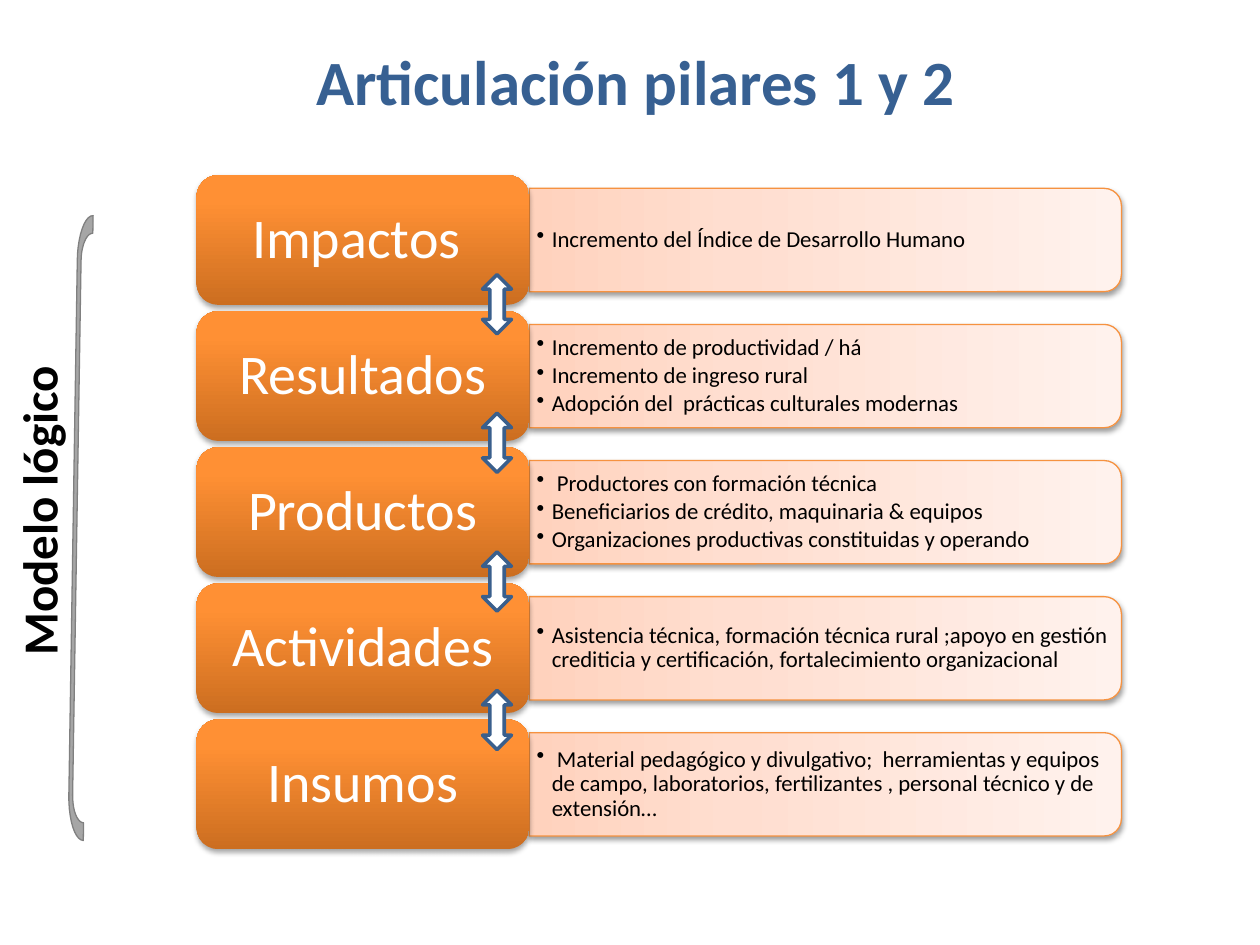
from math import cos, pi, sin

from lxml.etree import SubElement
from pptx import Presentation
from pptx.dml.color import RGBColor
from pptx.enum.shapes import MSO_SHAPE
from pptx.enum.text import MSO_ANCHOR, PP_ALIGN
from pptx.oxml.ns import qn
from pptx.util import Inches, Pt

ROUNDED = MSO_SHAPE.ROUNDED_RECTANGLE
TWO_ROUNDED = MSO_SHAPE.ROUND_2_SAME_RECTANGLE
DOUBLE_ARROW = MSO_SHAPE.UP_DOWN_ARROW
TOP, MIDDLE = MSO_ANCHOR.TOP, MSO_ANCHOR.MIDDLE
LEFT, CENTER = PP_ALIGN.LEFT, PP_ALIGN.CENTER

FONT = "Calibri"
COLORS = {
    "title": "376092", "black": "000000", "white": "FFFFFF",
    "panel_line": "F69240", "arrow_line": "3A5F8C",
    "bracket": "A6A6A6", "bracket_line": "808080",
}
PANEL_STOPS = [(0, "FFD2BD"), (35, "FFDED0"), (100, "FFF2ED")]
LABEL_STOPS = [(0, "CC6E20"), (80, "FF9034"), (100, "FF9136")]

LEVELS = [
    ("Impactos ", ["Incremento del Índice de Desarrollo Humano"]),
    ("Resultados", [
        "Incremento de productividad / há",
        "Incremento de ingreso rural",
        "Adopción del  prácticas culturales modernas",
    ]),
    ("Productos", [
        " Productores con formación técnica",
        "Beneficiarios de crédito, maquinaria & equipos",
        "Organizaciones productivas constituidas y operando",
    ]),
    ("Actividades", [
        "Asistencia técnica, formación técnica rural ;apoyo en gestión "
        "crediticia y certificación, fortalecimiento organizacional",
    ]),
    ("Insumos", [
        " Material pedagógico y divulgativo;  herramientas y equipos de campo, "
        "laboratorios, fertilizantes , personal técnico y de extensión…",
    ]),
]
FIRST_TOP, LEVEL_STEP = 1.39, 1.08
LABEL_LEFT, LABEL_WIDTH, LABEL_HEIGHT = 1.56, 2.64, 1.03
PANEL_LEFT, PANEL_WIDTH, PANEL_HEIGHT = 4.2, 4.7, 0.82
ARROW_TOP, ARROW_STEP = 2.18, 1.1


def color(name):
    return RGBColor.from_string(COLORS[name])


def add_text(page, place, lines, size, color_name, bold=False, align=LEFT,
             anchor=TOP, inset=(0.1, 0.05), wrap=True, spacing=None,
             after=None, bullet=False):
    box = page.shapes.add_textbox(*map(Inches, place))
    frame = box.text_frame
    frame.word_wrap = wrap
    frame.vertical_anchor = anchor
    frame.margin_left = frame.margin_right = Inches(inset[0])
    frame.margin_top = frame.margin_bottom = Inches(inset[1])
    for index, line in enumerate(lines):
        para = frame.add_paragraph() if index else frame.paragraphs[0]
        para.alignment = align
        para.line_spacing = spacing
        para.space_after = after
        if bullet:
            add_bullet(para)
        span = para.add_run()
        span.text = line
        span.font.name = FONT
        span.font.size = Pt(size)
        span.font.bold = bold
        span.font.color.rgb = color(color_name)
    return box


def add_bullet(para):
    para.level = 1
    properties = para._p.get_or_add_pPr()
    properties.set("marL", str(Inches(0.12)))
    properties.set("indent", str(-Inches(0.12)))
    SubElement(properties, qn("a:buChar"), char="•")


def add_shape(page, kind, place, line=None, line_width=0):
    shape = page.shapes.add_shape(kind, *map(Inches, place))
    shape.shadow.inherit = False
    if line:
        shape.line.color.rgb = color(line)
        shape.line.width = Pt(line_width)
    else:
        shape.line.fill.background()
    return shape


def fill_gradient(shape, stops):
    shape.fill.gradient()
    shape.fill.gradient_angle = 90
    stop_list = shape._element.spPr.find(qn("a:gradFill")).find(qn("a:gsLst"))
    stop_list.clear()
    for position, value in stops:
        stop = SubElement(stop_list, qn("a:gs"), pos=str(position * 1000))
        SubElement(stop, qn("a:srgbClr"), val=value)


def add_shadow(shape, distance, opacity):
    effects = shape._element.spPr.find(qn("a:effectLst"))
    shadow = SubElement(effects, qn("a:outerShdw"), blurRad=str(Pt(3.1)),
                        dist=str(Pt(distance)), dir="5400000", rotWithShape="0")
    tint = SubElement(shadow, qn("a:srgbClr"), val=COLORS["black"])
    SubElement(tint, qn("a:alpha"), val=str(opacity * 1000))


def add_panel(page, top, lines):
    panel_top = top + (LABEL_HEIGHT - PANEL_HEIGHT) / 2
    shift = (PANEL_WIDTH - PANEL_HEIGHT) / 2
    place = (PANEL_LEFT + shift, panel_top - shift, PANEL_HEIGHT, PANEL_WIDTH)
    panel = add_shape(page, TWO_ROUNDED, place, "panel_line", 0.75)
    panel.rotation = 90
    fill_gradient(panel, PANEL_STOPS)
    add_shadow(panel, 1.6, 38)
    add_text(page, (PANEL_LEFT + 0.01, panel_top + 0.04, 4.66, 0.74), lines,
             13, "black", anchor=MIDDLE, inset=(0.05, 0.03), spacing=0.9,
             after=Pt(2), bullet=True)


def add_label(page, top, name):
    label = add_shape(page, ROUNDED, (LABEL_LEFT, top, LABEL_WIDTH, LABEL_HEIGHT))
    fill_gradient(label, LABEL_STOPS)
    add_shadow(label, 1.8, 35)
    add_text(page, (LABEL_LEFT + 0.05, top + 0.05, 2.54, 0.93), [name], 32,
             "white", align=CENTER, anchor=MIDDLE, inset=(0.13, 0.07),
             spacing=0.9)


def add_arrow(page, top):
    arrow = add_shape(page, DOUBLE_ARROW, (3.83, top, 0.23, 0.47),
                      "arrow_line", 2)
    arrow.fill.solid()
    arrow.fill.fore_color.rgb = color("white")


def bracket_side(left, right, start, bend, height, steps=10):
    angles = [pi / 2 * step / steps for step in range(steps + 1)]
    upper = [(right - (right - left) * sin(angle),
              bend - (bend - start) * cos(angle)) for angle in angles]
    return upper + [(x, height - y) for x, y in reversed(upper)]


def add_bracket(page):
    left, top, width, height = 0.58, 1.71, 0.12, 4.96
    outer = bracket_side(0, width, 0, 0.36, height)
    inner = bracket_side(0.03, width, 0.14, 0.36, height)
    points = [(Inches(left + x), Inches(top + y))
              for x, y in outer + inner[::-1]]
    builder = page.shapes.build_freeform(*points[0])
    builder.add_line_segments(points[1:], close=True)
    bracket = builder.convert_to_shape()
    bracket.rotation = 0.9
    bracket.shadow.inherit = False
    bracket.fill.solid()
    bracket.fill.fore_color.rgb = color("bracket")
    bracket.line.color.rgb = color("bracket_line")
    bracket.line.width = Pt(0)


def main():
    deck = Presentation()
    deck.slide_width, deck.slide_height = Inches(10), Inches(7.5)
    page = deck.slides.add_slide(deck.slide_layouts[6])
    add_text(page, (0.42, 0.29, 9.25, 0.71), ["Articulación pilares 1 y 2"],
             36, "title", bold=True, align=CENTER)
    model = add_text(page, (-1, 3.71, 2.61, 0.57), ["Modelo lógico"], 28,
                     "black", bold=True, wrap=False)
    model.rotation = 270
    add_bracket(page)
    for index, (name, lines) in enumerate(LEVELS):
        top = FIRST_TOP + index * LEVEL_STEP
        add_panel(page, top, lines)
        add_label(page, top, name)
    for index in range(len(LEVELS) - 1):
        add_arrow(page, ARROW_TOP + index * ARROW_STEP)
    deck.save("out.pptx")


if __name__ == "__main__":
    main()
